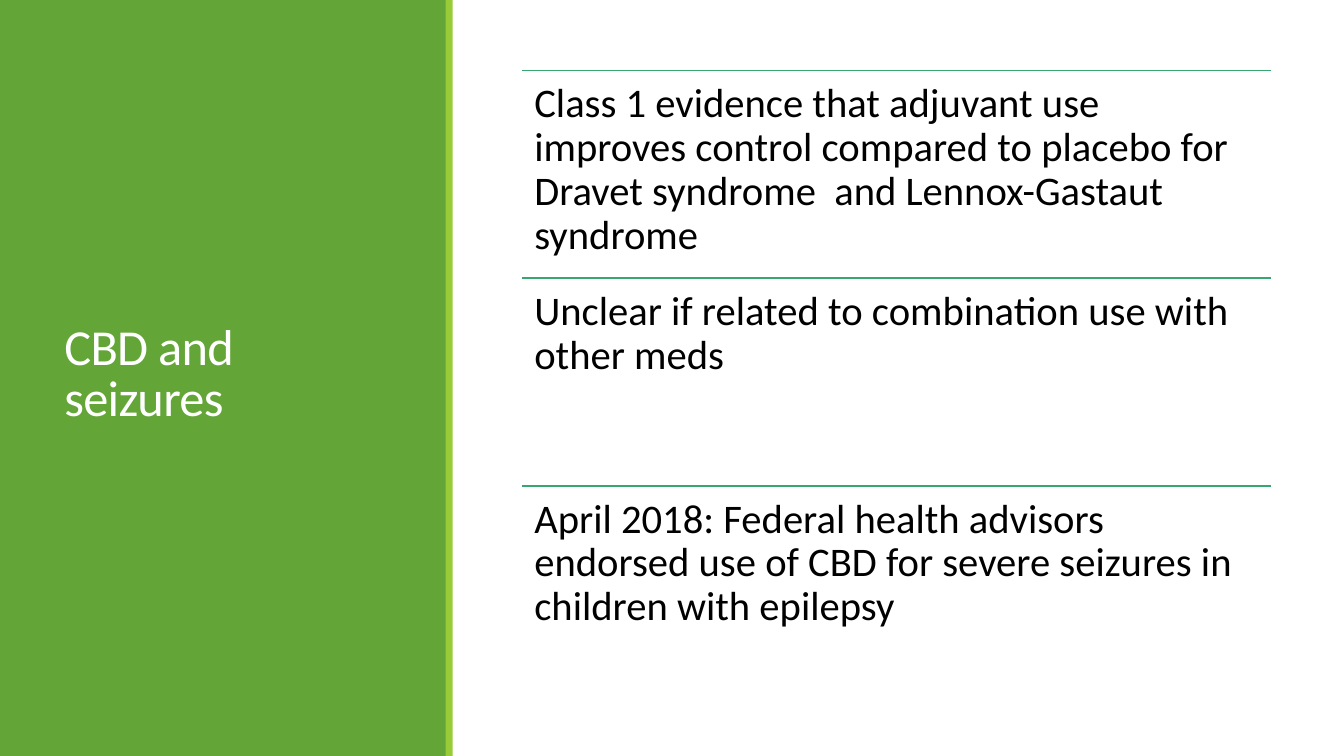
from pptx import Presentation
from pptx.dml.color import RGBColor
from pptx.enum.shapes import MSO_CONNECTOR, MSO_SHAPE
from pptx.enum.text import MSO_ANCHOR, PP_ALIGN
from pptx.oxml.ns import qn
from pptx.util import Inches, Pt
from lxml.etree import SubElement

TITLE = "CBD and seizures"
POINTS = [
    "Class 1 evidence that adjuvant use improves control compared to placebo for "
    "Dravet syndrome  and Lennox-Gastaut syndrome",
    "Unclear if related to combination use with other meds",
    "April 2018: Federal health advisors endorsed use of CBD for severe seizures "
    "in children with epilepsy",
]
COLORS = {"panel": "63A537", "stripe": "99CB38", "rule": "37A76F",
          "title": "FFFFFF", "text": "000000"}
FONT = "Calibri"
LIST_LEFT, LIST_TOP, LIST_WIDTH, ROW_HEIGHT = 5.18, 0.7, 7.43, 2.06


def color(name):
    return RGBColor.from_string(COLORS[name])


def add_band(page, left, width, fill):
    band = page.shapes.add_shape(MSO_SHAPE.RECTANGLE, Inches(left), 0,
                                 Inches(width), Inches(7.5))
    band.shadow.inherit = False
    band.fill.solid()
    band.fill.fore_color.rgb = color(fill)
    band.line.fill.background()


def add_text(page, text, place, size, fill, spacing, insets, anchor):
    box = page.shapes.add_textbox(*map(Inches, place))
    frame = box.text_frame
    frame.word_wrap = True
    frame.vertical_anchor = anchor
    frame.margin_left = frame.margin_right = Inches(insets[0])
    frame.margin_top = frame.margin_bottom = Inches(insets[1])
    para = frame.paragraphs[0]
    para.text = text
    para.alignment = PP_ALIGN.LEFT
    para.line_spacing = spacing
    para.font.name = FONT
    para.font.size = Pt(size)
    para.font.color.rgb = color(fill)
    return para


def add_rule(page, top):
    rule = page.shapes.add_connector(
        MSO_CONNECTOR.STRAIGHT, Inches(LIST_LEFT), Inches(top),
        Inches(LIST_LEFT + LIST_WIDTH), Inches(top))
    rule.line.color.rgb = color("rule")
    rule.line.width = Pt(1)
    SubElement(rule._element.spPr, qn("a:effectLst"))


def main():
    deck = Presentation()
    deck.slide_width, deck.slide_height = Inches(13.33), Inches(7.5)
    page = deck.slides.add_slide(deck.slide_layouts[6])

    # Title panel with its bright edge
    add_band(page, 0, 4.43, "panel")
    add_band(page, 4.42, 0.07, "stripe")
    title = add_text(page, TITLE, (0.54, 0.57, 3.37, 6.31), 36, "title",
                     0.85, (0.1, 0.05), MSO_ANCHOR.MIDDLE)
    title.runs[0].font._element.set("spc", "-50")

    # Ruled list of points
    for row, point in enumerate(POINTS):
        top = LIST_TOP + row * ROW_HEIGHT
        add_rule(page, top)
        add_text(page, point, (LIST_LEFT, top, LIST_WIDTH, ROW_HEIGHT), 29,
                 "text", 0.9, (0.12, 0.12), MSO_ANCHOR.TOP)

    deck.save("out.pptx")


if __name__ == "__main__":
    main()
